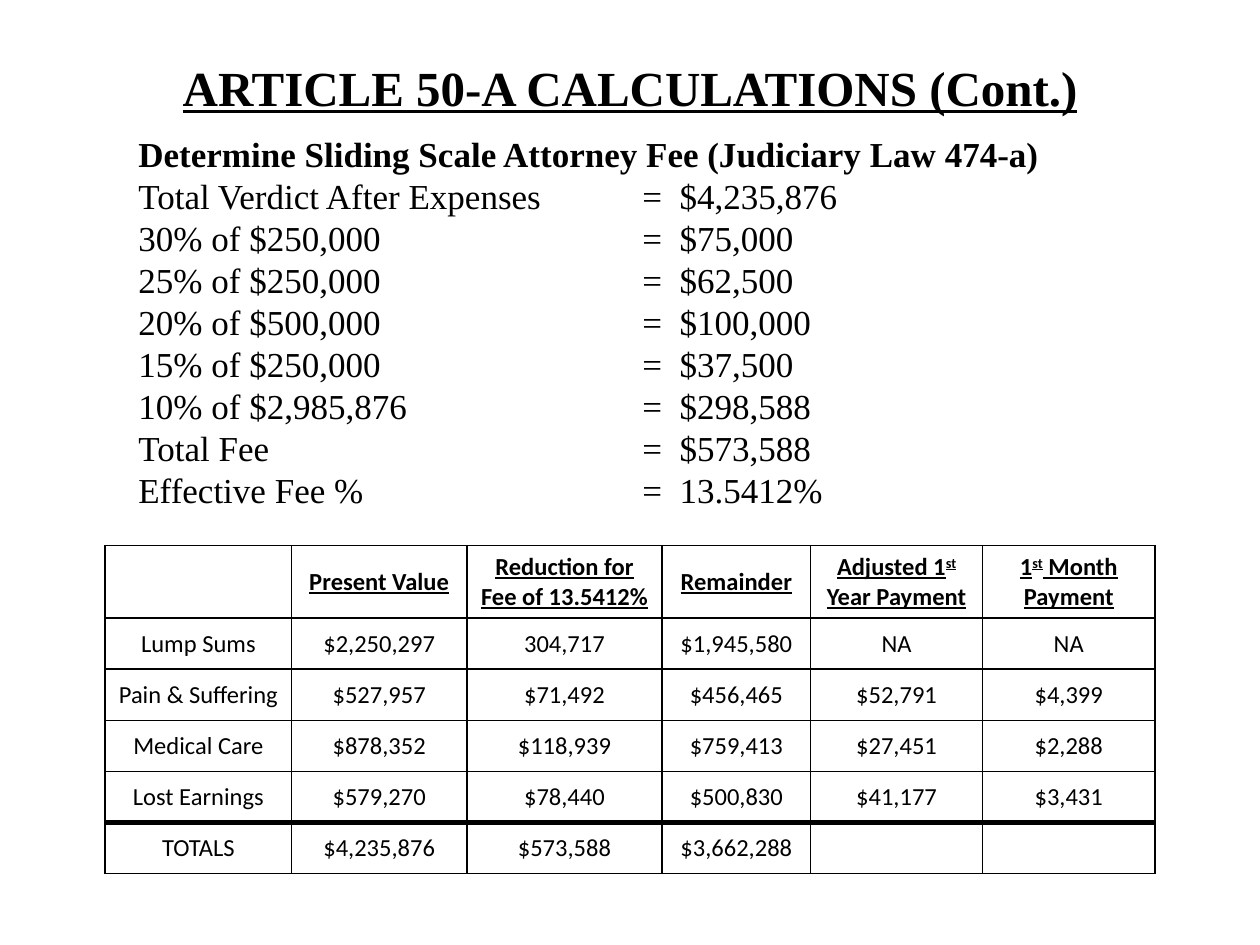
from dataclasses import dataclass

from lxml import etree
from pptx import Presentation
from pptx.dml.color import RGBColor
from pptx.enum.text import MSO_ANCHOR, PP_ALIGN
from pptx.oxml.ns import qn
from pptx.util import Cm, Pt

BLACK = RGBColor(0, 0, 0)
CENTER = PP_ALIGN.CENTER
LEFT = PP_ALIGN.LEFT
MIDDLE = MSO_ANCHOR.MIDDLE
TOP = MSO_ANCHOR.TOP
SERIF = "Times New Roman"
SANS = "Calibri"
TAB_STOPS = (Cm(10.16), Cm(10.91))
COLUMN_WIDTHS = (3.76, 3.53, 3.94, 2.99, 3.47, 3.47)
HEADER_HEIGHT = Cm(1.46)
ROW_HEIGHT = Cm(1.03)
THIN = Pt(1)
THICK = Pt(3)


@dataclass(frozen=True)
class FeeLine:
    label: str
    amount: str


@dataclass(frozen=True)
class Header:
    before: str = ""
    superscript: str = ""
    after: str = ""


FEE_HEADING = "Determine Sliding Scale Attorney Fee (Judiciary Law 474-a)"
FEE_LINES = (
    FeeLine("Total Verdict After Expenses", "$4,235,876"),
    FeeLine("30% of $250,000", "$75,000"),
    FeeLine("25% of $250,000", "$62,500"),
    FeeLine("20% of $500,000", "$100,000"),
    FeeLine("15% of $250,000", "$37,500"),
    FeeLine("10% of $2,985,876", "$298,588"),
    FeeLine("Total Fee", "$573,588"),
    FeeLine("Effective Fee %", "13.5412%"),
)
HEADERS = (
    Header(),
    Header("Present Value"),
    Header("Reduction for Fee of 13.5412%"),
    Header("Remainder"),
    Header("Adjusted 1", "st", " Year Payment"),
    Header("1", "st", " Month Payment"),
)
AWARDS = (
    ("Lump Sums", "$2,250,297", "304,717", "$1,945,580", "NA", "NA"),
    ("Pain & Suffering", "$527,957", "$71,492", "$456,465", "$52,791", "$4,399"),
    ("Medical Care", "$878,352", "$118,939", "$759,413", "$27,451", "$2,288"),
    ("Lost Earnings", "$579,270", "$78,440", "$500,830", "$41,177", "$3,431"),
    ("TOTALS", "$4,235,876", "$573,588", "$3,662,288", "", ""),
)


def format_runs(paragraph, name: str, size: int, bold=False, underline=False) -> None:
    for run in paragraph.runs:
        run.font.name = name
        run.font.size = Pt(size)
        run.font.bold = bold
        run.font.underline = underline
        run.font.color.rgb = BLACK


def add_title(slide) -> None:
    title = slide.shapes.title
    title.left, title.top = Cm(1.27), Cm(0.76)
    title.width, title.height = Cm(22.86), Cm(1.98)
    title.text_frame.text = "ARTICLE 50-A CALCULATIONS (Cont.)"
    title.text_frame.vertical_anchor = MIDDLE
    paragraph = title.text_frame.paragraphs[0]
    paragraph.alignment = CENTER
    format_runs(paragraph, SERIF, 28, bold=True, underline=True)


def add_tab_stops(paragraph) -> None:
    tab_list = etree.SubElement(paragraph._p.get_or_add_pPr(), qn("a:tabLst"))
    for position in TAB_STOPS:
        etree.SubElement(tab_list, qn("a:tab"), pos=str(position), algn="l")


def add_fee_lines(slide) -> None:
    box = slide.shapes.add_textbox(Cm(2.54), Cm(2.54), Cm(21.49), Cm(7.95))
    text_frame = box.text_frame
    text_frame.word_wrap = True
    text_frame.vertical_anchor = TOP
    lines = [f"{line.label}\t=\t{line.amount}" for line in FEE_LINES]
    text_frame.text = "\n".join([FEE_HEADING, *lines])
    for index, paragraph in enumerate(text_frame.paragraphs):
        paragraph.alignment = LEFT
        paragraph.line_spacing = Pt(24)
        add_tab_stops(paragraph)
        format_runs(paragraph, SERIF, 20, bold=index == 0)


def set_borders(cell, top: int, bottom: int) -> None:
    properties = cell._tc.get_or_add_tcPr()
    widths = {"a:lnL": THIN, "a:lnR": THIN, "a:lnT": top, "a:lnB": bottom}
    for position, (tag, width) in enumerate(widths.items()):
        line = etree.Element(qn(tag), w=str(width))
        fill = etree.SubElement(line, qn("a:solidFill"))
        etree.SubElement(fill, qn("a:srgbClr"), val=str(BLACK))
        properties.insert(position, line)


def fill_header(paragraph, header: Header) -> None:
    for text in (header.before, header.superscript, header.after):
        if text:
            paragraph.add_run().text = text
    format_runs(paragraph, SANS, 14, bold=True, underline=True)
    if header.superscript:
        paragraph.runs[1].font._element.set("baseline", "30000")


def add_award_table(slide) -> None:
    row_count = len(AWARDS) + 1
    frame = slide.shapes.add_table(
        row_count, len(HEADERS), Cm(2.12), Cm(11), Cm(sum(COLUMN_WIDTHS)),
        HEADER_HEIGHT + ROW_HEIGHT * len(AWARDS),
    )
    table = frame.table
    table.first_row = False
    table.horz_banding = False
    for column, width in zip(table.columns, COLUMN_WIDTHS):
        column.width = Cm(width)
    totals_row = row_count - 1
    for row_index, row in enumerate(table.rows):
        row.height = ROW_HEIGHT if row_index else HEADER_HEIGHT
        top = THICK if row_index == totals_row else THIN
        bottom = THICK if row_index == totals_row - 1 else THIN
        for column_index, cell in enumerate(row.cells):
            cell.fill.background()
            cell.vertical_anchor = MIDDLE
            set_borders(cell, top, bottom)
            paragraph = cell.text_frame.paragraphs[0]
            paragraph.alignment = CENTER
            if row_index == 0:
                fill_header(paragraph, HEADERS[column_index])
            else:
                paragraph.text = AWARDS[row_index - 1][column_index]
                format_runs(paragraph, SANS, 14)


def main() -> None:
    presentation = Presentation()
    presentation.slide_width = Cm(25.4)
    presentation.slide_height = Cm(19.05)
    slide = presentation.slides.add_slide(presentation.slide_layouts[5])
    add_title(slide)
    add_award_table(slide)
    add_fee_lines(slide)
    presentation.save("out.pptx")


if __name__ == "__main__":
    main()
